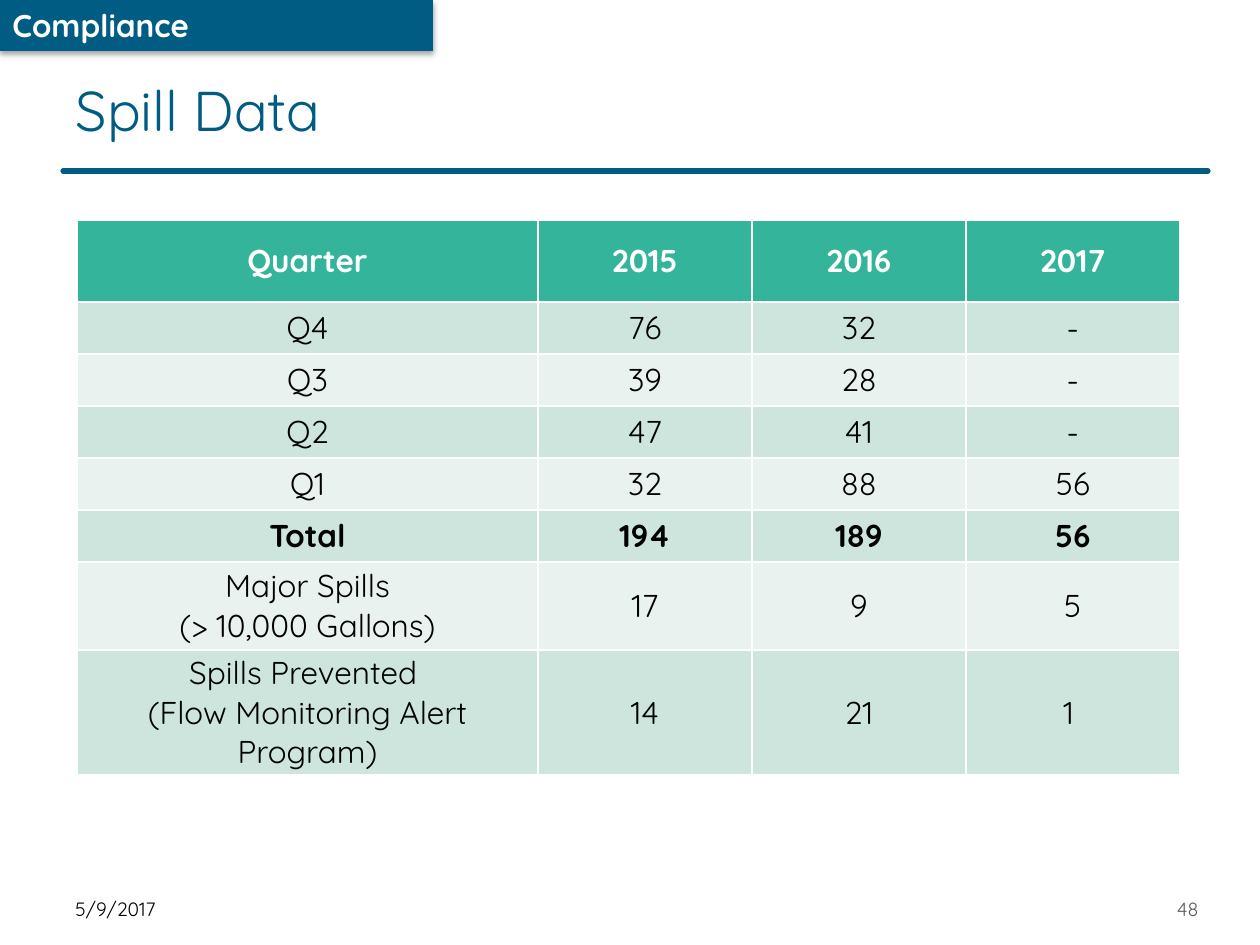
from dataclasses import dataclass

from lxml.etree import SubElement
from pptx import Presentation
from pptx.dml.color import RGBColor
from pptx.enum.shapes import MSO_CONNECTOR, MSO_SHAPE
from pptx.enum.text import MSO_ANCHOR, PP_ALIGN
from pptx.oxml import parse_xml
from pptx.oxml.ns import nsdecls, qn
from pptx.util import Pt


@dataclass(frozen=True)
class Theme:
    font: str = "Quicksand"
    navy: str = "005C82"
    green: str = "35B49C"
    bands: tuple = ("CEE5DE", "E8F2EF")
    white: str = "FFFFFF"
    black: str = "000000"
    gray: str = "595959"
    title_size: int = 32
    body_size: int = 18
    footer_size: int = 11


theme = Theme()
SCALE = 9144000 / 1260


def px(*lengths):
    return [round(length * SCALE) for length in lengths]


def write(frame, text, size, color, bold=False, align=PP_ALIGN.LEFT, anchor=MSO_ANCHOR.MIDDLE):
    frame.text = text
    frame.word_wrap = True
    frame.vertical_anchor = anchor
    for paragraph in frame.paragraphs:
        paragraph.alignment = align
        paragraph.font.name = theme.font
        paragraph.font.size = Pt(size)
        paragraph.font.bold = bold
        paragraph.font.color.rgb = RGBColor.from_string(color)


presentation = Presentation()
presentation.slide_width, presentation.slide_height = px(1260, 945)
slide = presentation.slides.add_slide(presentation.slide_layouts[5])
shapes = slide.shapes

title = shapes.title
title.left, title.top, title.width, title.height = px(63, 53, 974, 113)
write(title.text_frame, "Spill Data", theme.title_size, theme.navy)

footers = [
    ("5/9/2017", (63, 896, 248, 26), theme.black, PP_ALIGN.LEFT),
    ("48", (1105, 896, 106, 26), theme.gray, PP_ALIGN.RIGHT),
]
for text, place, color, align in footers:
    footer = shapes.add_textbox(*px(*place))
    write(footer.text_frame, text, theme.footer_size, color, align=align)

banner = shapes.add_shape(MSO_SHAPE.RECTANGLE, *px(0, 0, 433, 51))
banner.fill.solid()
banner.fill.fore_color.rgb = RGBColor.from_string(theme.navy)
banner.line.fill.background()
banner.shadow.inherit = False
banner_effects = banner._element.spPr.find(qn("a:effectLst"))
banner_effects.append(parse_xml(
    f'<a:outerShdw {nsdecls("a")} blurRad="39370" dist="22860" dir="5400000" rotWithShape="0">'
    f'<a:srgbClr val="{theme.black}"><a:alpha val="35000"/></a:srgbClr></a:outerShdw>'
))

section = shapes.add_textbox(*px(0, 0, 432, 51))
write(section.text_frame, "Compliance", theme.body_size, theme.white, bold=True, anchor=MSO_ANCHOR.TOP)

title_rule = shapes.add_connector(MSO_CONNECTOR.STRAIGHT, *px(63, 171, 1208, 171))
title_rule.line.color.rgb = RGBColor.from_string(theme.navy)
title_rule.line.width = Pt(3)
title_rule.line._get_or_add_ln().set("cap", "rnd")
SubElement(title_rule._element.spPr, qn("a:effectLst"))

spill_rows = [
    ("Quarter", "2015", "2016", "2017"),
    ("Q4", "76", "32", "-"),
    ("Q3", "39", "28", "-"),
    ("Q2", "47", "41", "-"),
    ("Q1", "32", "88", "56"),
    ("Total", "194", "189", "56"),
    ("Major Spills\n(> 10,000 Gallons)", "17", "9", "5"),
    ("Spills Prevented \n(Flow Monitoring Alert Program)", "14", "21", "1 "),
]
column_widths = px(461, 214, 214, 214)
row_heights = px(82, *[52] * 5, 88, 125)
spills = shapes.add_table(
    len(spill_rows), len(column_widths), *px(77, 220), sum(column_widths), sum(row_heights)
).table
for column, width in zip(spills.columns, column_widths):
    column.width = width
for row, height in zip(spills.rows, row_heights):
    row.height = height

for row_index, values in enumerate(spill_rows):
    is_header = row_index == 0
    fill = theme.green if is_header else theme.bands[(row_index - 1) % 2]
    color = theme.white if is_header else theme.black
    bold = is_header or values[0] == "Total"
    for column_index, value in enumerate(values):
        cell = spills.cell(row_index, column_index)
        cell.fill.solid()
        cell.fill.fore_color.rgb = RGBColor.from_string(fill)
        cell.margin_top, cell.margin_bottom = px(3, 3)
        cell.vertical_anchor = MSO_ANCHOR.MIDDLE
        write(cell.text_frame, value, theme.body_size, color, bold, PP_ALIGN.CENTER)

major_spills = spills.cell(6, 0).text_frame.paragraphs[0]
major_spills._p.get_or_add_pPr().set("indent", str(px(-42)[0]))

presentation.save("out.pptx")
